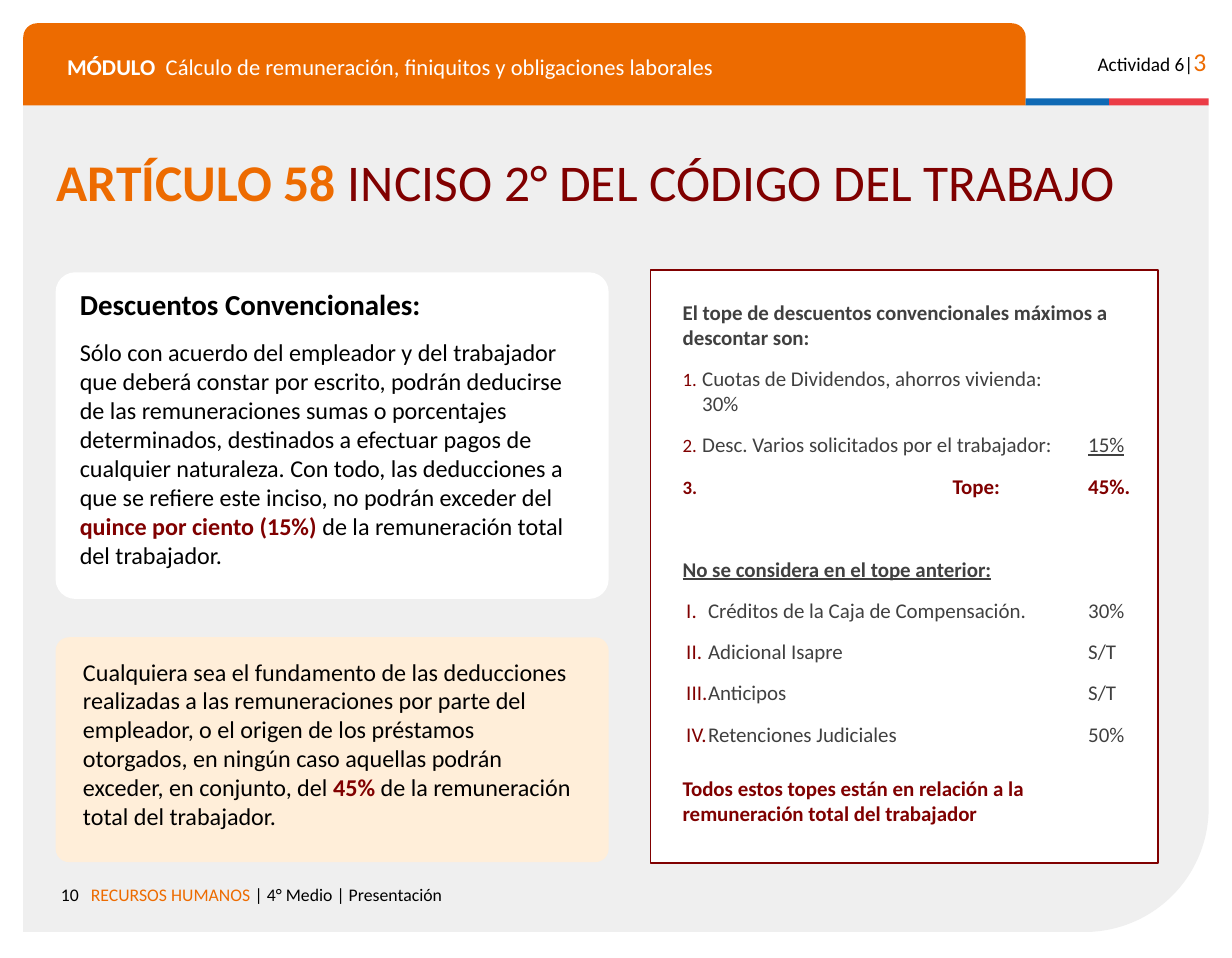
from lxml import etree
from pptx import Presentation
from pptx.dml.color import RGBColor
from pptx.enum.shapes import MSO_SHAPE
from pptx.enum.text import PP_ALIGN
from pptx.oxml.ns import qn
from pptx.util import Cm, Pt

RECT, ROUND = MSO_SHAPE.RECTANGLE, MSO_SHAPE.ROUNDED_RECTANGLE
TAB_TOP, CORNER = MSO_SHAPE.ROUND_2_SAME_RECTANGLE, MSO_SHAPE.ROUND_1_RECTANGLE
LEFT, RIGHT = PP_ALIGN.LEFT, PP_ALIGN.RIGHT
FONT = "Calibri"
ORANGE, WINE, GRAY = "ED6B00", "800000", "404040"
BLACK, WHITE = "000000", "FFFFFF"
PAD = 0.25

# kind, (left, top, width, height), fill, line, corner sizes
PANELS = [
    (CORNER, (0.51, 2.29, 25.98, 18.14), "EFEFEF", None, [0.15]),
    (TAB_TOP, (0.51, 0.51, 21.97, 1.8), ORANGE, None, [0.17, 0]),
    (RECT, (22.48, 2.16, 1.83, 0.15), "0F69B4", None, []),
    (RECT, (24.31, 2.16, 2.18, 0.15), "EB3C46", None, []),
    (RECT, (14.25, 5.92, 11.13, 13), WHITE, WINE, []),
    (ROUND, (1.22, 13.97, 12.12, 4.93), "FFEED9", None, [0.06]),
    (ROUND, (1.22, 5.97, 12.12, 7.16), WHITE, None, [0.06]),
]

# A run is (text, size, colour, style): b is bold, u is underlined
NUMBER = [("10", 11, BLACK, "")]
FOOTER = [("RECURSOS HUMANOS ", 11, ORANGE, ""),
          ("| 4° Medio | Presentación", 11, BLACK, "")]
ACTIVITY = [("Actividad 6|", 12, BLACK, ""), ("3", 16, ORANGE, "")]
MODULE = [("MÓDULO  ", 14, WHITE, "b"),
          ("Cálculo de remuneración, finiquitos y obligaciones laborales",
           14, WHITE, "")]
TITLE = [("ARTÍCULO 58 ", 32, ORANGE, "b"),
         ("INCISO 2° DEL CÓDIGO DEL TRABAJO", 32, WINE, "")]
LIMIT = [("Cualquiera sea el fundamento de las deducciones realizadas a las "
          "remuneraciones por parte del empleador, o el origen de los "
          "préstamos otorgados, en ningún caso aquellas podrán exceder, en "
          "conjunto, del ", 15, BLACK, ""),
         ("45% ", 15, WINE, "b"),
         ("de la remuneración total del trabajador.", 15, BLACK, "")]
HEAD = [("Descuentos Convencionales:", 18, BLACK, "b")]
RULE = [("Sólo con acuerdo del empleador y del trabajador que deberá constar "
         "por escrito, podrán deducirse de las remuneraciones sumas o "
         "porcentajes determinados, destinados a efectuar pagos de cualquier "
         "naturaleza. Con todo, las deducciones a que se refiere este inciso, "
         "no podrán exceder del ", 15, BLACK, ""),
        ("quince por ciento (15%) ", 15, WINE, "b"),
        ("de la remuneración total del trabajador.", 15, BLACK, "")]
INTRO = [("El tope de descuentos convencionales máximos a descontar son:",
          13, GRAY, "b")]
CAPS = [
    [("Cuotas de Dividendos, ahorros vivienda:\n30%", 13, GRAY, "")],
    [("Desc. Varios solicitados por el trabajador:\t", 13, GRAY, ""),
     ("15%", 13, GRAY, "u")],
    [("\tTope:\t45%.", 13, WINE, "b")],
]
APART = [("No se considera en el tope anterior:", 13, GRAY, "bu")]
EXTRAS = [("Créditos de la Caja de Compensación.", "30%"),
          ("Adicional Isapre", "S/T"),
          ("Anticipos", "S/T"),
          ("Retenciones Judiciales", "50%")]
CLOSE = [("Todos estos topes están en relación a la remuneración total del "
          "trabajador", 13, WINE, "b")]

# Numbering: scheme, left margin, hanging indent, marker size, tab stops
AMOUNT = 8.89
DIGITS = ("arabicPeriod", 0.43, 0.53, 90, [AMOUNT])
TOTAL = ("arabicPeriod", 0.43, 0.53, 90, [5.92, AMOUNT])
ROMAN = ("romanUcPeriod", 0.56, 0.48, 100, [AMOUNT])


def rgb(code):
    return RGBColor.from_string(code)


def box(place):
    return [Cm(n) for n in place]


def add_panel(slide, kind, place, fill, line, sizes):
    panel = slide.shapes.add_shape(kind, *box(place))
    panel.shadow.inherit = False
    panel.fill.solid()
    panel.fill.fore_color.rgb = rgb(fill)
    if line:
        panel.line.color.rgb = rgb(line)
        panel.line.width = Pt(0.75)
    else:
        panel.line.fill.background()
    for i, size in enumerate(sizes):
        panel.adjustments[i] = size
    return panel


def number(para, scheme, margin, hang, size, stops):
    """Give a paragraph an automatic number, its indents and tab stops."""
    props = para._p.get_or_add_pPr()
    props.set("marL", str(Cm(margin)))
    props.set("indent", str(-Cm(hang)))

    def add(parent, tag, **attrs):
        return etree.SubElement(parent, qn("a:" + tag), attrs)

    add(add(props, "buClr"), "srgbClr", val=WINE)
    add(props, "buSzPct", val=str(size * 1000))
    add(props, "buAutoNum", type=scheme)
    tabs = add(props, "tabLst")
    for stop in stops:
        add(tabs, "tab", pos=str(Cm(stop)), algn="l")


def add_runs(para, runs):
    for text, size, color, style in runs:
        for i, part in enumerate(text.split("\n")):
            if i:
                para.add_line_break()
            run = para.add_run()
            run.text = part
            font = run.font
            font.name, font.size = FONT, Pt(size)
            font.bold, font.underline = "b" in style, "u" in style
            font.color.rgb = rgb(color)


def add_text(slide, place, paras, pad=0.13, align=LEFT, lead=1.0):
    """Add a text box; each paragraph is (runs, space before, numbering)."""
    frame = slide.shapes.add_textbox(*box(place)).text_frame
    frame.word_wrap = True
    frame.margin_left = frame.margin_right = Cm(PAD)
    frame.margin_top = frame.margin_bottom = Cm(pad)
    for i, (runs, gap, marks) in enumerate(paras):
        para = frame.add_paragraph() if i else frame.paragraphs[0]
        para.alignment, para.line_spacing = align, lead
        para.space_before = Pt(gap)
        if marks:
            number(para, *marks)
        add_runs(para, runs)


def main():
    deck = Presentation()
    deck.slide_width, deck.slide_height = Cm(27), Cm(21)
    slide = deck.slides.add_slide(deck.slide_layouts[6])

    panels = [add_panel(slide, *panel) for panel in PANELS]
    ground = panels[0]
    ground.rotation = 180
    ground._element.spPr.xfrm.set("flipH", "1")

    def line(place, runs, **opts):
        add_text(slide, place, [(runs, 0, None)], **opts)

    line((0.51, 19.13, 1.47, 0.74), NUMBER, pad=PAD, align=RIGHT)
    line((1.74, 19.13, 17, 0.97), FOOTER, pad=PAD)
    line((23.44, 0.76, 3.25, 0.97), ACTIVITY, pad=PAD, align=RIGHT)
    line((1.22, 0.97, 20.68, 0.89), MODULE, pad=PAD, lead=0.9)
    line((0.99, 3.15, 25.15, 1.55), TITLE)
    line((1.57, 14.27, 11.38, 4.11), LIMIT)
    add_text(slide, (1.5, 6.15, 11.61, 6.5),
             [(HEAD, 0, None), (RULE, 10, None)])

    caps = [(runs, 10, marks)
            for runs, marks in zip(CAPS, (DIGITS, DIGITS, TOTAL))]
    extras = [([(f"{name}\t{cap}", 13, GRAY, "")], 10, ROMAN)
              for name, cap in EXTRAS]
    add_text(slide, (14.71, 6.43, 10.52, 12),
             [(INTRO, 0, None), *caps, (APART, 36, None), *extras,
              (CLOSE, 18, None)])
    deck.save("out.pptx")


if __name__ == "__main__":
    main()
